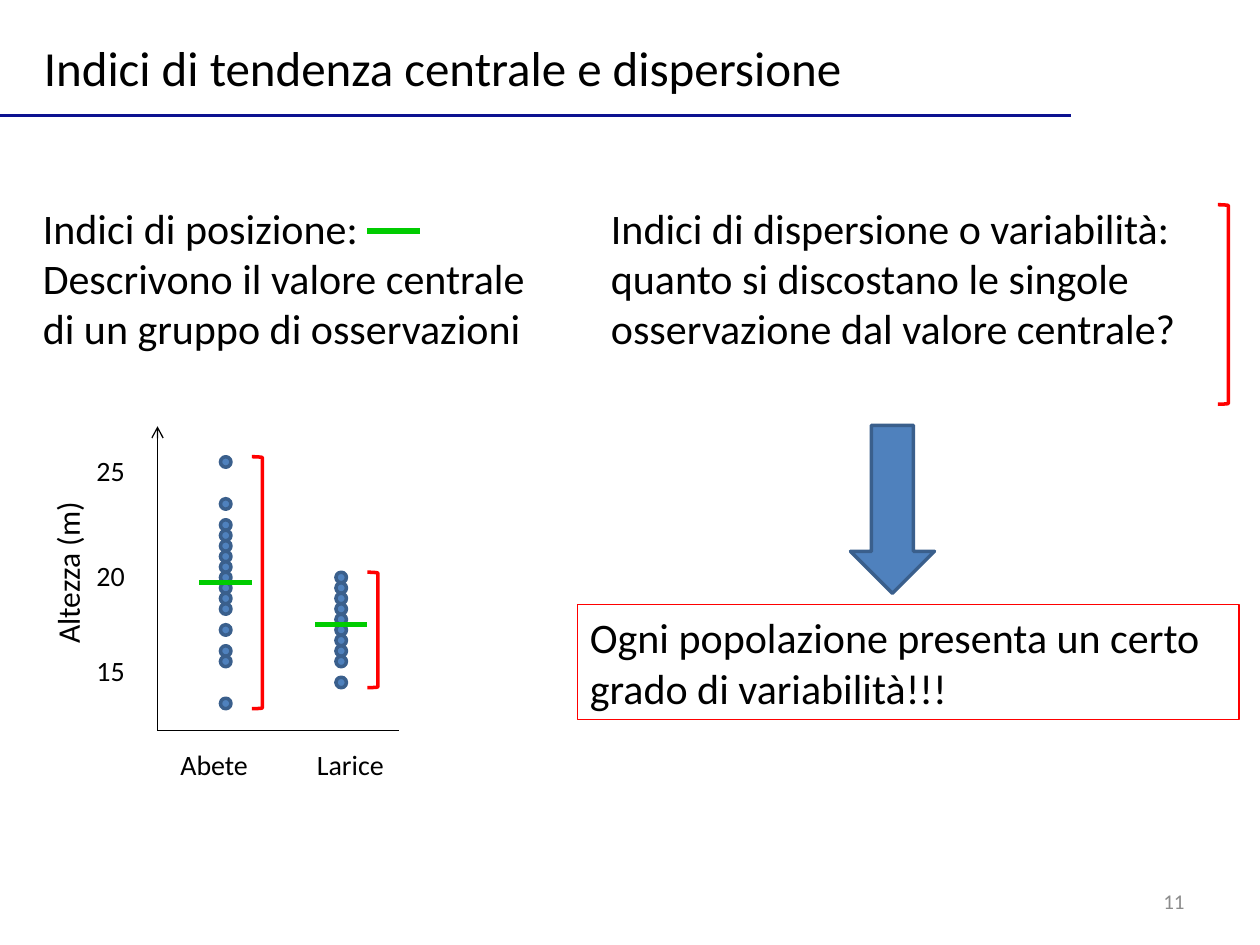
import pptx
import pptx.util
import pptx.dml.color
import pptx.enum.shapes
import pptx.enum.text
import pptx.oxml
import pptx.oxml.ns

PX = 7620  # EMU per px, 120 px to the inch
COLORS = {
    "text": "000000", "number": "8C8C8C", "rule": "0C1290", "fill": "4F81BD",
    "outline": "3A5F8C", "spread": "FF0000", "center": "00CC00",
}
SHAPES = pptx.enum.shapes.MSO_SHAPE
ALIGN = pptx.enum.text.PP_ALIGN

presentation = pptx.Presentation()
presentation.slide_width = 1200 * PX
presentation.slide_height = 900 * PX
slide = presentation.slides.add_slide(presentation.slide_layouts[6])


def rgb(name):
    return pptx.dml.color.RGBColor.from_string(COLORS[name])


def write(shape, lines, size, color="text", align=ALIGN.LEFT, wrap=True):
    frame = shape.text_frame
    frame.word_wrap = wrap
    frame.vertical_anchor = pptx.enum.text.MSO_ANCHOR.MIDDLE
    frame.text = "\n".join(lines)
    for paragraph in frame.paragraphs:
        paragraph.alignment = align
        paragraph.font.name = "Calibri"
        paragraph.font.size = pptx.util.Pt(size)
        paragraph.font.color.rgb = rgb(color)


# Text: left, top, width, height, size, lines
texts = [
    (29, 186, 502, 157, 24, ["Indici di posizione:",
                             "Descrivono il valore centrale di un gruppo di osservazioni"]),
    (570, 186, 601, 157, 24, ["Indici di dispersione o variabilità:",
                              "quanto si discostano le singole osservazione dal valore centrale?"]),
    (80, 616, 80, 44, 16, ["15"]),
    (80, 526, 80, 44, 16, ["20"]),
    (80, 426, 80, 44, 16, ["25"]),
    (160, 706, 140, 44, 16, ["Abete"]),
    (290, 706, 100, 44, 16, ["Larice"]),
]
for left, top, width, height, size, lines in texts:
    box = slide.shapes.add_textbox(left * PX, top * PX, width * PX, height * PX)
    write(box, lines, size)

title = slide.shapes.add_textbox(30 * PX, 30 * PX, 792 * PX, 68 * PX)
write(title, ["Indici di tendenza centrale e dispersione"], 28, wrap=False)

axis_title = slide.shapes.add_textbox(-46 * PX, 491 * PX, 220 * PX, 48 * PX)
axis_title.rotation = 270
write(axis_title, ["Altezza (m)"], 18)

slide_number = slide.shapes.add_textbox(860 * PX, 834 * PX, 280 * PX, 48 * PX)
write(slide_number, ["11"], 12, "number", ALIGN.RIGHT)

# Shapes: preset, left, top, width, height, fill, line colour, line width
dot_tops = {
    210: [435, 475, *range(495, 576, 10), 595, 615, 625, 665],
    320: [*range(545, 626, 10), 645],
}
shapes = [
    (SHAPES.OVAL, left, top, 10, 10, "fill", "outline", 2)
    for left, tops in dot_tops.items() for top in tops
]
shapes += [
    (SHAPES.RIGHT_BRACKET, 240, 435, 10, 240, None, "spread", 2),
    (SHAPES.RIGHT_BRACKET, 350, 545, 10, 110, None, "spread", 2),
    (SHAPES.RIGHT_BRACKET, 1160, 195, 10, 190, None, "spread", 2),
    (SHAPES.DOWN_ARROW, 810, 405, 80, 160, "fill", "outline", 2),
    (SHAPES.RECTANGLE, 550, 576, 630, 109, None, "spread", 0.75),
]
for preset, left, top, width, height, fill, line, weight in shapes:
    shape = slide.shapes.add_shape(preset, left * PX, top * PX, width * PX, height * PX)
    shape.shadow.inherit = False
    if fill:
        shape.fill.solid()
        shape.fill.fore_color.rgb = rgb(fill)
    else:
        shape.fill.background()
    shape.line.color.rgb = rgb(line)
    shape.line.width = pptx.util.Pt(weight)
    if preset == SHAPES.RECTANGLE:
        write(shape, ["Ogni popolazione presenta un certo grado di variabilità!!!"], 24)

# Lines: start x, start y, end x, end y, colour, width, arrowhead
lines = [
    (0, 110, 1020, 110, "rule", 2, False),
    (150, 696, 150, 406, "text", 0.75, True),
    (150, 696, 380, 696, "text", 0.75, False),
    (190, 555, 240, 555, "center", 3, False),
    (300, 595, 350, 595, "center", 3, False),
    (350, 220, 400, 220, "center", 3, False),
]
for start_x, start_y, end_x, end_y, color, weight, arrowhead in lines:
    connector = slide.shapes.add_connector(
        pptx.enum.shapes.MSO_CONNECTOR.STRAIGHT,
        start_x * PX, start_y * PX, end_x * PX, end_y * PX)
    connector.line.color.rgb = rgb(color)
    connector.line.width = pptx.util.Pt(weight)
    properties = connector._element.spPr
    properties.append(pptx.oxml.parse_xml(
        f"<a:effectLst {pptx.oxml.ns.nsdecls('a')}/>"))
    if arrowhead:
        connector.line._get_or_add_ln().append(pptx.oxml.parse_xml(
            f"<a:tailEnd {pptx.oxml.ns.nsdecls('a')} type='arrow'/>"))

presentation.save("out.pptx")
